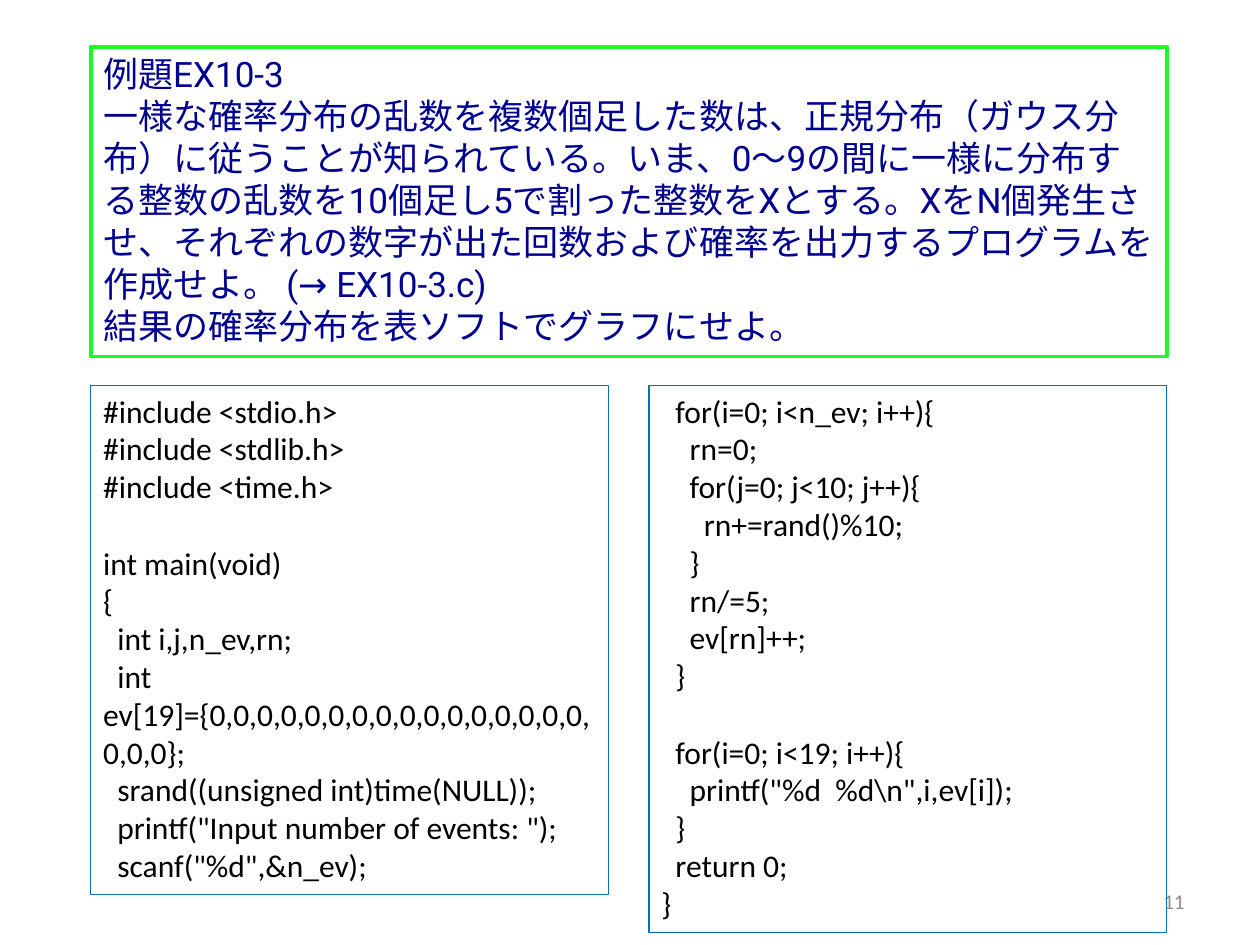
import pptx
import pptx.util
import pptx.dml.color
import pptx.enum.shapes
import pptx.enum.text

Pt = pptx.util.Pt
Inches = pptx.util.Inches
RGB = pptx.dml.color.RGBColor
Align = pptx.enum.text.PP_ALIGN
Anchor = pptx.enum.text.MSO_ANCHOR
Fit = pptx.enum.text.MSO_AUTO_SIZE

GREEN = RGB(0x19, 0xFF, 0x25)
BLUE = RGB(0x00, 0x70, 0xC0)
NAVY = RGB(0x00, 0x00, 0x90)
BLACK = RGB(0x00, 0x00, 0x00)
GRAY = RGB(0x8C, 0x8C, 0x8C)

WIDE, HIGH = 10, 7.5
LEFT, SPAN, GAP = 0.72, 8.54, 0.32
COL = (SPAN - GAP) / 2
TOP = 3.06
SPACE, LINE = 4.05, 22

TASK = """例題EX10-3
一様な確率分布の乱数を複数個足した数は、正規分布（ガウス分布）に従うことが知られている。いま、0～9の間に一様に分布する整数の乱数を10個足し5で割った整数をXとする。XをN個発生させ、それぞれの数字が出た回数および確率を出力するプログラムを作成せよ。 (→ EX10-3.c)
結果の確率分布を表ソフトでグラフにせよ。"""

HEAD = """#include <stdio.h>
#include <stdlib.h>
#include <time.h>

int main(void)
{
  int i,j,n_ev,rn;
  int ev[19]={0,0,0,0,0,0,0,0,0,0,0,0,0,0,0,0,0,0,0};
  srand((unsigned int)time(NULL));
  printf("Input number of events: ");
  scanf("%d",&n_ev);"""

LOOP = r"""  for(i=0; i<n_ev; i++){
    rn=0;
    for(j=0; j<10; j++){
      rn+=rand()%10;
    }
    rn/=5;
    ev[rn]++;
  }

  for(i=0; i<19; i++){
    printf("%d  %d\n",i,ev[i]);
  }
  return 0;
}"""


def style(para, font, size, color):
    """Format every run of a paragraph."""
    for run in para.runs:
        run.font.name = font
        run.font.size = Pt(size)
        run.font.color.rgb = color


def fill(frame, text, font, size, color):
    """Write lines, turning lead spaces into indents and blank lines into space."""
    frame.text = "\n".join(row.lstrip() for row in text.split("\n") if row)
    paras = iter(frame.paragraphs)
    blank = False
    for row in text.split("\n"):
        if row:
            para = next(paras)
            para.alignment = Align.LEFT
            lead = len(row) - len(row.lstrip())
            if lead:
                para._p.get_or_add_pPr().set("indent", str(int(Pt(lead * SPACE))))
            if blank:
                para.space_before = Pt(LINE)
            style(para, font, size, color)
        blank = not row


def panel(slide, place, text, edge, weight, font, size, color):
    """Add an outlined box that holds lines of text."""
    box = slide.shapes.add_shape(
        pptx.enum.shapes.MSO_SHAPE.RECTANGLE, *map(Inches, place))
    box.shadow.inherit = False
    box.fill.background()
    box.line.color.rgb = edge
    box.line.width = Pt(weight)
    frame = box.text_frame
    frame.word_wrap = True
    frame.auto_size = Fit.SHAPE_TO_FIT_TEXT
    frame.vertical_anchor = Anchor.TOP
    fill(frame, text, font, size, color)


def number(slide, text):
    """Add the page number at the lower right."""
    box = slide.shapes.add_textbox(*map(Inches, (7.17, 6.95, 2.33, 0.4)))
    frame = box.text_frame
    frame.word_wrap = True
    frame.vertical_anchor = Anchor.MIDDLE
    frame.text = text
    para = frame.paragraphs[0]
    para.alignment = Align.RIGHT
    style(para, "Calibri", 12, GRAY)


def main():
    """Build the slide and save it."""
    deck = pptx.Presentation()
    deck.slide_width, deck.slide_height = Inches(WIDE), Inches(HIGH)
    slide = deck.slides.add_slide(deck.slide_layouts[6])
    number(slide, "11")
    panel(slide, (LEFT, 0.37, SPAN, 2.46), TASK, GREEN, 2.25, "Roboto", 20, NAVY)
    for col, (code, tall) in enumerate(((HEAD, 4.04), (LOOP, 4.34))):
        place = (LEFT + col * (COL + GAP), TOP, COL, tall)
        panel(slide, place, code, BLUE, 0.75, "Calibri", 18, BLACK)
    deck.save("out.pptx")


if __name__ == "__main__":
    main()
